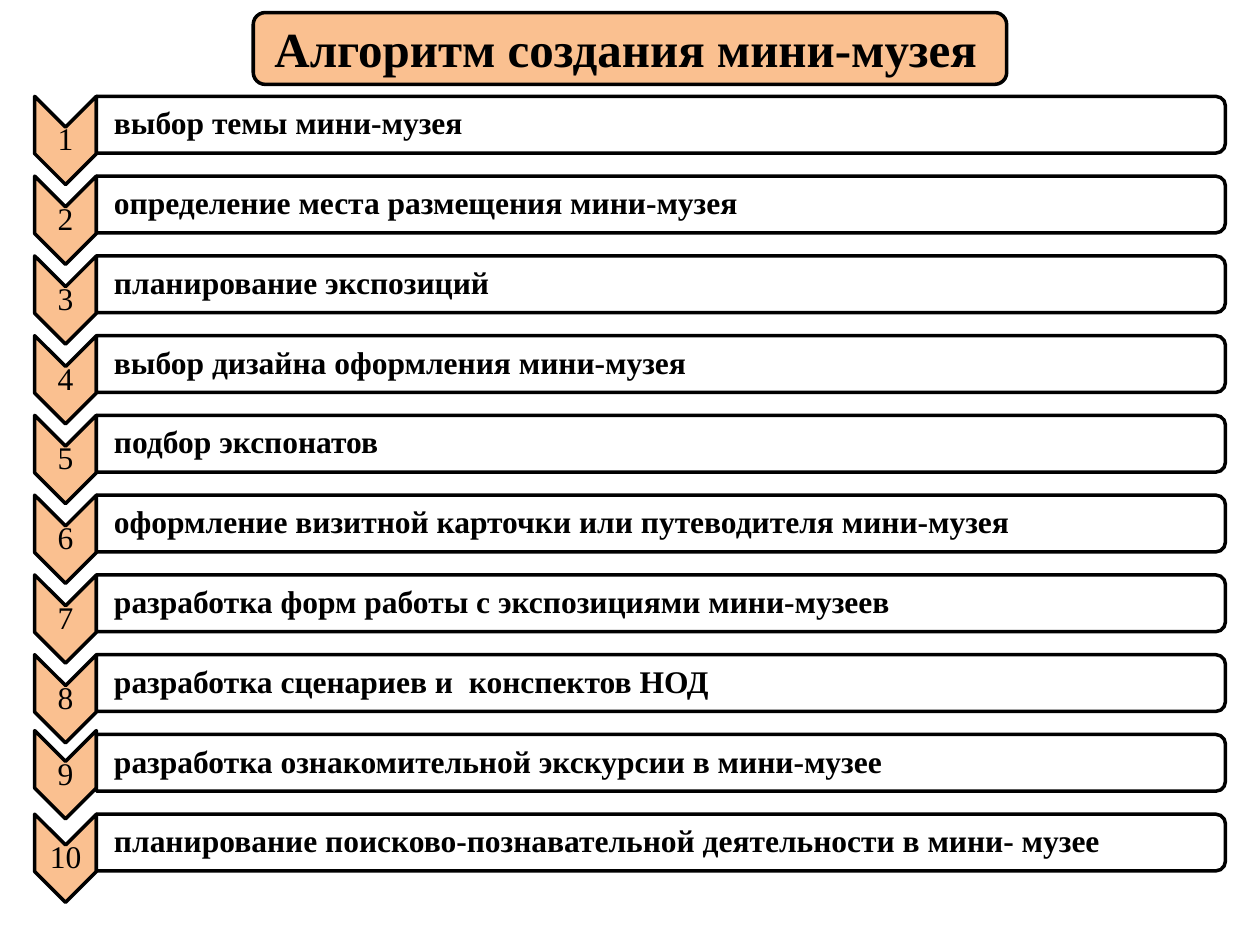
from pptx import Presentation
from pptx.dml.color import RGBColor as RGB
from pptx.enum.shapes import MSO_SHAPE as SHAPE
from pptx.enum.text import MSO_ANCHOR as ANCHOR, MSO_AUTO_SIZE as AUTO, PP_ALIGN as ALIGN
from pptx.oxml.ns import qn
from pptx.util import Inches, Pt
from lxml.etree import SubElement

TITLE = "Алгоритм создания мини-музея"
STEPS = [
    "выбор темы мини-музея",
    "определение места размещения мини-музея",
    "планирование экспозиций",
    "выбор дизайна оформления мини-музея",
    "подбор экспонатов",
    "оформление визитной карточки или путеводителя мини-музея",
    "разработка форм работы с экспозициями мини-музеев",
    "разработка сценариев и  конспектов НОД",
    "разработка ознакомительной экскурсии в мини-музее",
    "планирование поисково-познавательной деятельности в мини- музее",
]
MARK_SHIFT = {9: -0.03}

THEME = {
    "accent": RGB.from_string("FAC090"),
    "paper": RGB.from_string("FFFFFF"),
    "ink": RGB.from_string("000000"),
    "paper_alpha": 90,
    "font": "Times New Roman",
    "title": Pt(28),
    "body": Pt(18),
    "line": Pt(2),
}

W, H = 10, 7.5
TOP, PITCH = 0.765, 0.633
MARK_X, MARK_W, MARK_H = 0.275, 0.49, 0.70
BAR_X, BAR_W, BAR_H = MARK_X + MARK_W, 8.96, 0.45
TITLE_W, TITLE_H, TITLE_Y = 5.98, 0.57, 0.10
TITLE_PAD = 0.07


def put(obj, values):
    for name, value in values.items():
        setattr(obj, name, value)


def add_shape(s, kind, x, y, w, h, fill, turned=False):
    if turned:
        x, y, w, h = x + (w - h) / 2, y + (h - w) / 2, h, w
    sp = s.shapes.add_shape(kind, *map(Inches, (x, y, w, h)))
    sp.rotation = 90 if turned else 0
    sp.shadow.inherit = False
    sp.fill.solid()
    sp.fill.fore_color.rgb = THEME[fill]
    sp.line.color.rgb = THEME["ink"]
    sp.line.width = THEME["line"]
    return sp


def add_text(s, text, x, y, w, h, frame, para, font):
    tf = s.shapes.add_textbox(*map(Inches, (x, y, w, h))).text_frame
    put(tf, frame)
    p = tf.paragraphs[0]
    put(p, para)
    r = p.add_run()
    r.text = text
    put(r.font, {"name": THEME["font"], **font})
    r.font.color.rgb = THEME["ink"]


def fade(sp, percent):
    color = sp.fill._xPr.find(qn("a:solidFill"))[0]
    SubElement(color, qn("a:alpha")).set("val", str(percent * 1000))


def main():
    prs = Presentation()
    put(prs, {"slide_width": Inches(W), "slide_height": Inches(H)})
    s = prs.slides.add_slide(prs.slide_layouts[6])

    tight = dict.fromkeys(("margin_left", "margin_top", "margin_right", "margin_bottom"), Inches(0.01))
    frame = {"word_wrap": True, "vertical_anchor": ANCHOR.MIDDLE, **tight}
    bar_frame = {**frame, "margin_left": Inches(0.14)}

    for n, step in enumerate(STEPS, 1):
        y = TOP + (n - 1) * PITCH
        mark_y = y + MARK_SHIFT.get(n, 0)
        mark = (MARK_X, mark_y, MARK_W, MARK_H)
        bar = (BAR_X, y, BAR_W, BAR_H)
        add_shape(s, SHAPE.CHEVRON, *mark, "accent", turned=True)
        add_text(s, str(n), MARK_X, mark_y + MARK_W / 2, MARK_W, MARK_H - MARK_W, frame,
                 {"alignment": ALIGN.CENTER, "line_spacing": 0.9}, {"size": THEME["body"]})
        sp = add_shape(s, SHAPE.ROUND_2_SAME_RECTANGLE, *bar, "paper", turned=True)
        fade(sp, THEME["paper_alpha"])
        add_text(s, step, *bar, bar_frame, {"line_spacing": 0.9},
                 {"size": THEME["body"], "bold": True})

    x = (W - TITLE_W) / 2
    add_shape(s, SHAPE.ROUNDED_RECTANGLE, x, TITLE_Y, TITLE_W, TITLE_H, "accent")
    add_text(s, TITLE, x + TITLE_PAD, TITLE_Y, TITLE_W - 2 * TITLE_PAD, TITLE_H,
             {"word_wrap": False, "auto_size": AUTO.SHAPE_TO_FIT_TEXT}, {},
             {"size": THEME["title"], "bold": True})
    prs.save("out.pptx")


if __name__ == "__main__":
    main()
